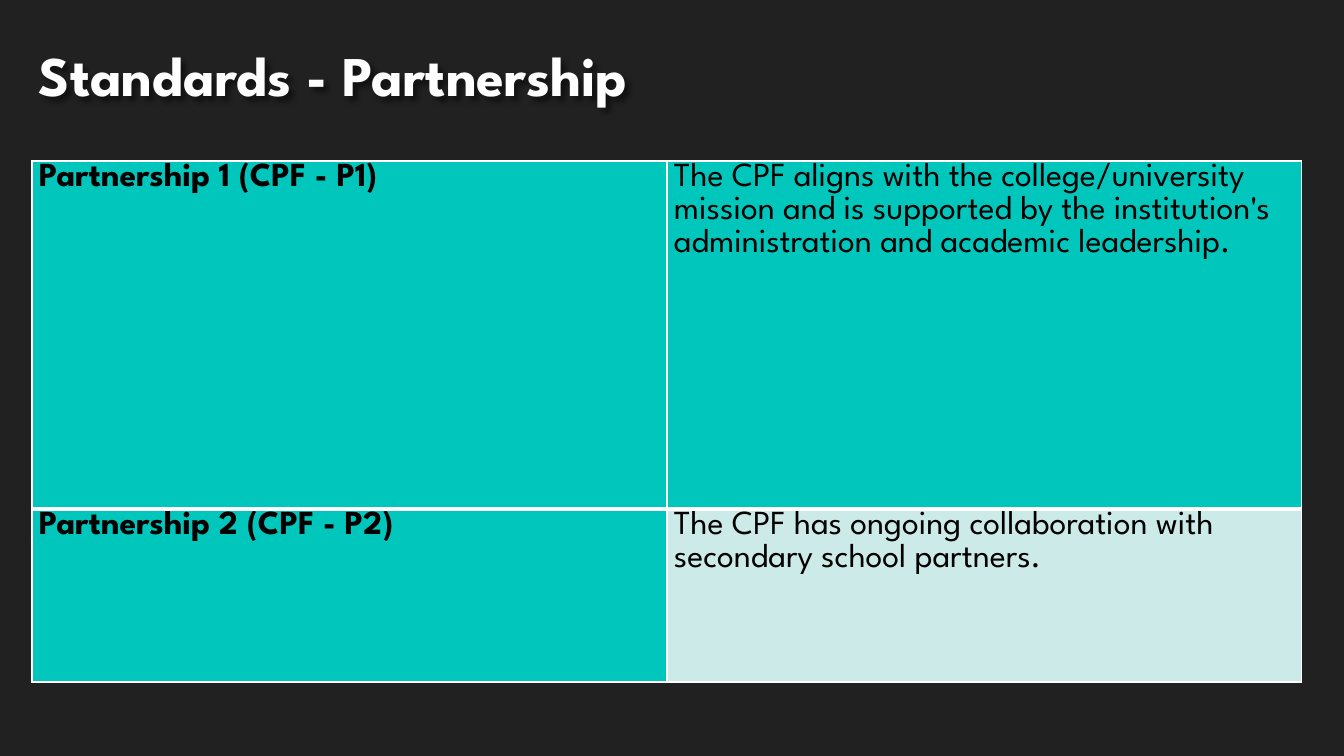
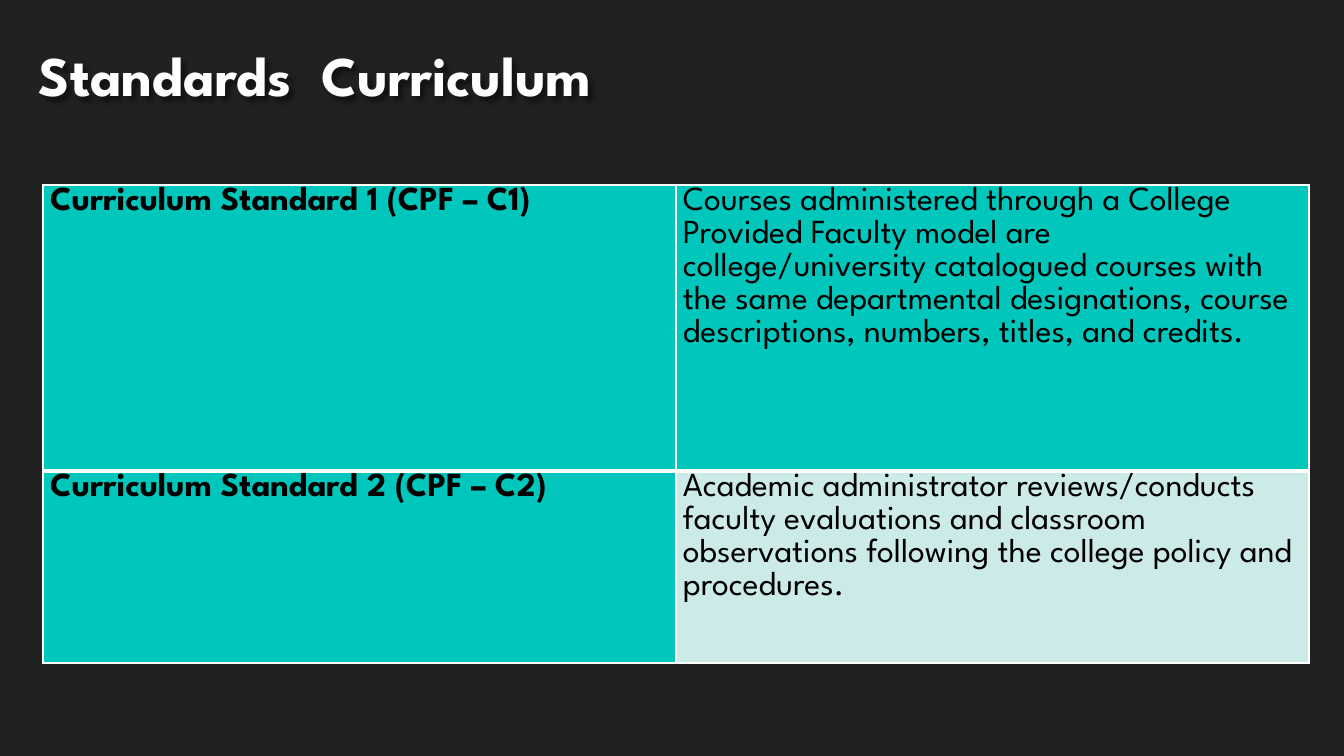
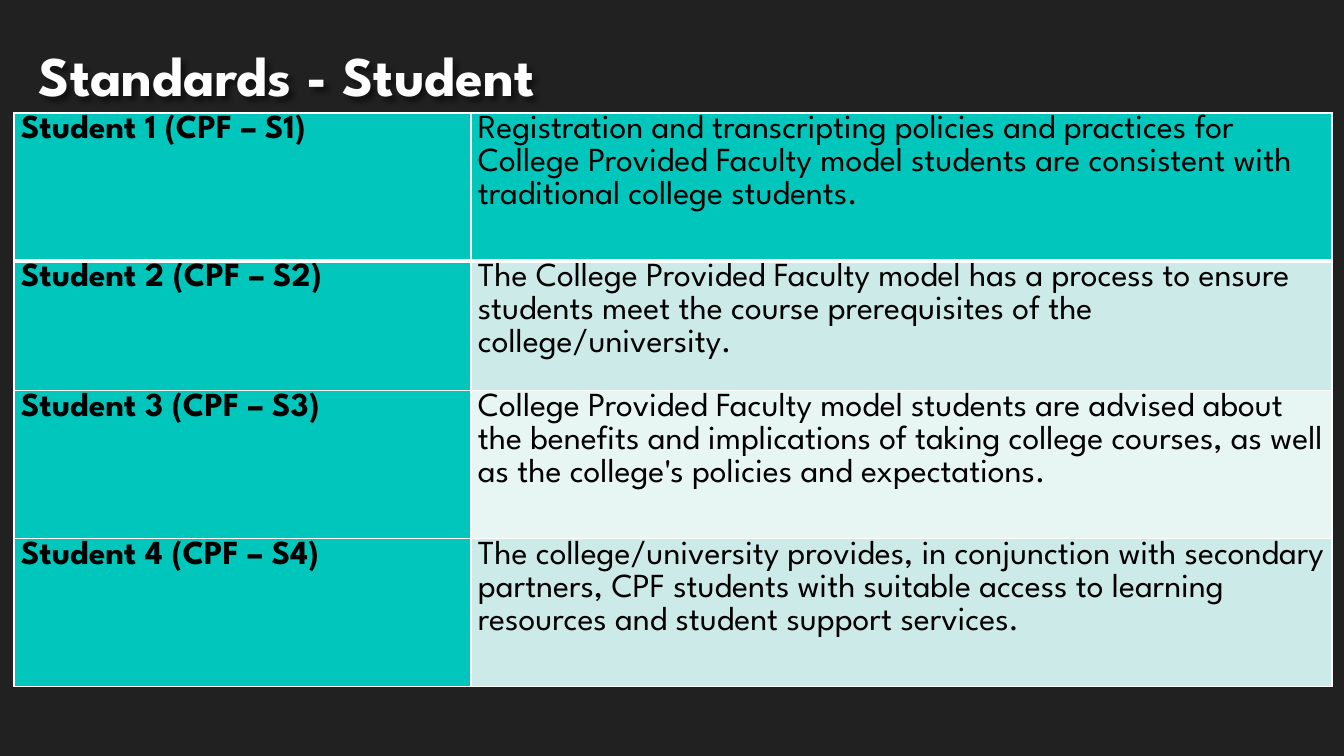
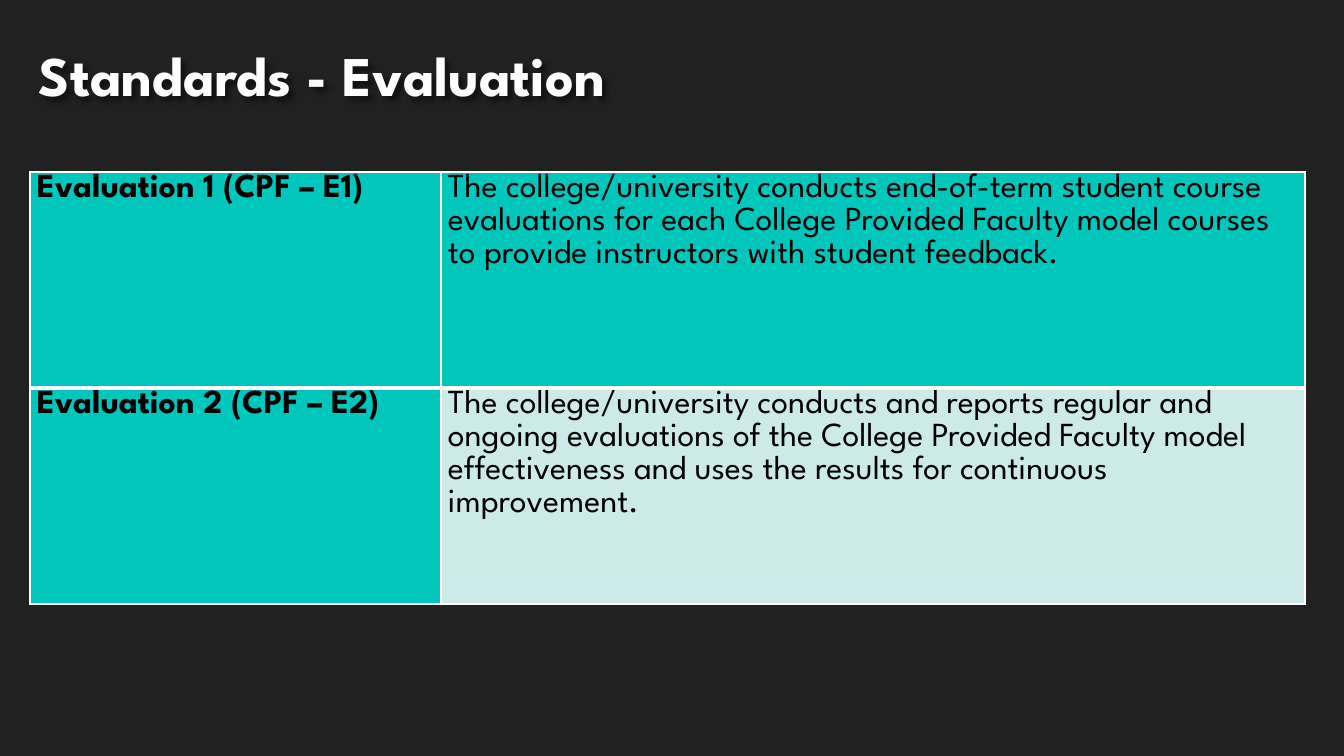
from dataclasses import dataclass

from lxml.etree import SubElement
from pptx import Presentation
from pptx.dml.color import RGBColor
from pptx.enum.text import MSO_ANCHOR, PP_ALIGN
from pptx.oxml.ns import qn
from pptx.util import Emu, Pt

SLIDE_WIDTH, SLIDE_HEIGHT = 1344, 756
EMU_PER_PX = 12192000 / SLIDE_WIDTH


@dataclass(frozen=True)
class Theme:
    font: str = "League Spartan"
    background: str = "212121"
    title_color: str = "FEFEFE"
    text_color: str = "000000"
    accent: str = "00C6BB"
    bands: tuple = ("CCEAE7", "E7F5F3")
    border: str = "FFFFFF"
    shadow: str = "000000"
    title_size: int = 40
    body_size: int = 24
    body_spacing: float = 1.07
    thin_border: int = 1
    header_border: int = 3


THEME = Theme()
TITLE_BOX = (0, 11, 1165, 102)

# Title, table corner, column widths, row heights, rows of text
STANDARDS = [
    ("Standards - Partnership", (32, 161), (635, 635), (348, 173), [
        ("Partnership 1 (CPF - P1)",
         "The CPF aligns with the college/university mission and is supported "
         "by the institution's administration and academic leadership."),
        ("Partnership 2 (CPF - P2)",
         "The CPF has ongoing collaboration with secondary school partners."),
    ]),
    ("Standards  Curriculum", (43, 185), (633, 633), (286, 192), [
        ("Curriculum Standard 1 (CPF – C1)",
         "Courses administered through a College Provided Faculty model are "
         "college/university catalogued courses with the same departmental "
         "designations, course descriptions, numbers, titles, and credits."),
        ("Curriculum Standard 2 (CPF – C2)",
         "Academic administrator reviews/conducts faculty evaluations and "
         "classroom observations following the college policy and procedures."),
    ]),
    ("Standards - Student", (14, 113), (457, 861), (148, 111, 148, 148), [
        ("Student 1 (CPF – S1)",
         "Registration and transcripting policies and practices for College "
         "Provided Faculty model students are consistent with traditional "
         "college students."),
        ("Student 2 (CPF – S2)",
         "The College Provided Faculty model has a process to ensure students "
         "meet the course prerequisites of the college/university."),
        ("Student 3 (CPF – S3)",
         "College Provided Faculty model students are advised about the "
         "benefits and implications of taking college courses, as well as the "
         "college's policies and expectations."),
        ("Student 4 (CPF – S4)",
         "The college/university provides, in conjunction with secondary "
         "partners, CPF students with suitable access to learning resources "
         "and student support services."),
    ]),
    ("Standards - Evaluation", (30, 172), (411, 864), (216, 216), [
        ("Evaluation 1 (CPF – E1)",
         "The college/university conducts end-of-term student course "
         "evaluations for each College Provided Faculty model courses to "
         "provide instructors with student feedback."),
        ("Evaluation 2 (CPF – E2)",
         "The college/university conducts and reports regular and ongoing "
         "evaluations of the College Provided Faculty model effectiveness and "
         "uses the results for continuous improvement."),
    ]),
]


def px(length):
    return Emu(round(length * EMU_PER_PX))


def write_text(text_frame, text, *, size, color, bold=False, spacing=1.0):
    paragraph = text_frame.paragraphs[0]
    paragraph.alignment = PP_ALIGN.LEFT
    paragraph.line_spacing = spacing
    run = paragraph.add_run()
    run.text = text
    run.font.name = THEME.font
    run.font.size = Pt(size)
    run.font.bold = bold
    run.font.color.rgb = RGBColor.from_string(color)


def add_soft_shadow(shape):
    effects = SubElement(shape._element.spPr, qn("a:effectLst"))
    shadow = SubElement(effects, qn("a:outerShdw"), blurRad="50800",
                        dist="38100", dir="2700000", algn="tl")
    color = SubElement(shadow, qn("a:srgbClr"), val=THEME.shadow)
    SubElement(color, qn("a:alpha"), val="48000")


def set_borders(cell, bottom_width):
    properties = cell._tc.get_or_add_tcPr()
    thin = THEME.thin_border
    for side, width in (("L", thin), ("R", thin), ("T", thin), ("B", bottom_width)):
        line = SubElement(properties, qn(f"a:ln{side}"), w=str(Pt(width)))
        fill = SubElement(line, qn("a:solidFill"))
        SubElement(fill, qn("a:srgbClr"), val=THEME.border)


def add_title(slide, box, text):
    shape = slide.shapes.add_textbox(*map(px, box))
    text_frame = shape.text_frame
    text_frame.word_wrap = True
    text_frame.vertical_anchor = MSO_ANCHOR.BOTTOM
    text_frame.margin_left = px(39)
    text_frame.margin_bottom = px(5)
    write_text(text_frame, text, size=THEME.title_size,
               color=THEME.title_color, bold=True)
    add_soft_shadow(shape)


def format_cell(cell, row, column, text):
    is_header = row == 0
    is_label = column == 0
    cell.margin_left = cell.margin_right = px(7)
    cell.margin_top = cell.margin_bottom = 0
    cell.vertical_anchor = MSO_ANCHOR.TOP
    set_borders(cell, THEME.header_border if is_header else THEME.thin_border)
    band = THEME.bands[(row - 1) % len(THEME.bands)]
    cell.fill.solid()
    cell.fill.fore_color.rgb = RGBColor.from_string(
        THEME.accent if is_header or is_label else band)
    write_text(cell.text_frame, text, size=THEME.body_size,
               color=THEME.text_color, bold=is_label,
               spacing=THEME.body_spacing)


def add_standards_table(slide, corner, widths, heights, rows):
    box = (*corner, sum(widths), sum(heights))
    table = slide.shapes.add_table(len(rows), len(widths), *map(px, box)).table
    table.first_row = table.horz_banding = False
    for column, width in zip(table.columns, widths):
        column.width = px(width)
    for row, height in zip(table.rows, heights):
        row.height = px(height)
    for row, texts in enumerate(rows):
        for column, text in enumerate(texts):
            format_cell(table.cell(row, column), row, column, text)


def main():
    presentation = Presentation()
    presentation.slide_width = px(SLIDE_WIDTH)
    presentation.slide_height = px(SLIDE_HEIGHT)

    # Background shared by every slide
    background = presentation.slide_master.background.fill
    background.solid()
    background.fore_color.rgb = RGBColor.from_string(THEME.background)

    blank = presentation.slide_layouts[6]
    for title, corner, widths, heights, rows in STANDARDS:
        slide = presentation.slides.add_slide(blank)
        add_title(slide, TITLE_BOX, title)
        add_standards_table(slide, corner, widths, heights, rows)

    presentation.save("out.pptx")


if __name__ == "__main__":
    main()
